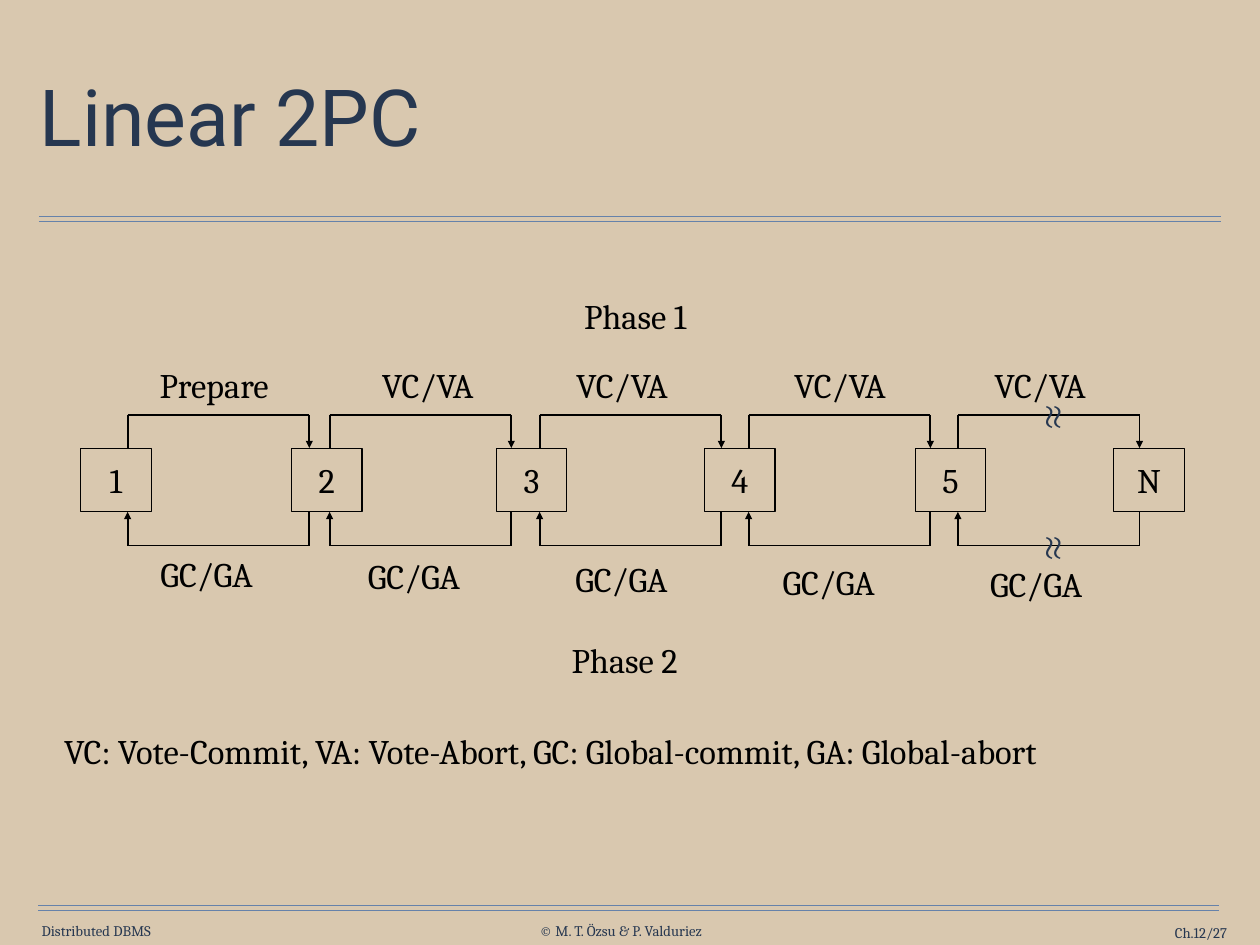
from dataclasses import dataclass
from itertools import pairwise

from lxml import etree
from pptx import Presentation
from pptx import util as u
from pptx.dml.color import RGBColor
from pptx.enum import shapes, text
from pptx.oxml import ns

WIDE, HIGH = 14.22, 10.67


@dataclass(frozen=True)
class Theme:
    sand: str = "D9C8AF"
    navy: str = "263750"
    rule: str = "6682AA"
    ink: str = "000000"
    head: str = "Roboto"
    body: str = "Cambria"
    sign: str = "TeX Gyre Pagella"
    big: int = 64
    mid: int = 28
    wave: int = 30
    tiny: int = 12


@dataclass(frozen=True)
class Area:
    """A rectangle in percent of the slide's width and height."""
    left: float
    top: float
    wide: float
    high: float

    def ends(self) -> tuple:
        return across(self.left), down(self.top), across(self.wide), down(self.high)


@dataclass(frozen=True)
class Site:
    name: str
    left: float


@dataclass(frozen=True)
class Hop:
    """A message pair between neighbours: bracket start, vote label and its left."""
    start: float
    vote: str
    left: float


LOOK = Theme()
SITES = [Site("1", 6.4), Site("2", 23.14), Site("3", 39.38),
         Site("4", 55.91), Site("5", 72.64), Site("N", 88.4)]
HOPS = [Hop(10.13, "Prepare", 11.67), Hop(26.16, "VC/VA", 29.32),
        Hop(42.83, "VC/VA", 44.73), Hop(59.42, "VC/VA", 62.03),
        Hop(76.02, "VC/VA", 77.92)]
SPAN = 14.42
ROOF, TOP, BASE, FLOOR = 43.9, 47.42, 54.17, 57.73
LABEL_W, LABEL_H = 12, 5.72
PAD = (1, 0.66)


def across(share: float) -> int:
    return u.Inches(WIDE * share / 100)


def down(share: float) -> int:
    return u.Inches(HIGH * share / 100)


def tint(code: str) -> RGBColor:
    return RGBColor.from_string(code)


def write(shape, words: str, *, size: int = LOOK.mid, font: str = LOOK.body,
          color: str = LOOK.ink, align=text.PP_ALIGN.LEFT,
          anchor=text.MSO_ANCHOR.TOP, pad: tuple = (0, 0),
          pitch: float = 1.0, turn: bool = False) -> None:
    frame = shape.text_frame
    frame.word_wrap = True
    frame.vertical_anchor = anchor
    frame.margin_left = frame.margin_right = across(pad[0])
    frame.margin_top = frame.margin_bottom = down(pad[1])
    if turn:
        frame._txBody.bodyPr.set("vert", "vert")
    para = frame.paragraphs[0]
    para.alignment = align
    para.line_spacing = pitch
    run = para.add_run()
    run.text = words
    run.font.size = u.Pt(size)
    run.font.name = font
    run.font.color.rgb = tint(color)


def label(slide, area: Area, words: str, **form) -> None:
    write(slide.shapes.add_textbox(*area.ends()), words, **form)


def line(slide, start: tuple, end: tuple, color: str = LOOK.ink,
         width: float = 1.5, arrow: bool = False) -> None:
    link = slide.shapes.add_connector(
        shapes.MSO_CONNECTOR.STRAIGHT, across(start[0]), down(start[1]),
        across(end[0]), down(end[1]))
    link.line.color.rgb = tint(color)
    link.line.width = u.Pt(width)
    if arrow:
        etree.SubElement(link.line._get_or_add_ln(), ns.qn("a:tailEnd"), type="triangle")
    etree.SubElement(link._element.spPr, ns.qn("a:effectLst"))


def route(slide, points: list) -> None:
    """Join the points with lines; the last one ends in an arrowhead."""
    legs = list(pairwise(points))
    for step, (start, end) in enumerate(legs, 1):
        line(slide, start, end, arrow=step == len(legs))


def frame(slide) -> None:
    """Draw the title, the double rules and the footer."""
    for left, right, top in ((3.09, 96.91, 22.87), (3.02, 96.77, 95.78)):
        for row in (top, top + 0.56):
            line(slide, (left, row), (right, row), LOOK.rule, 1)
    mid = text.MSO_ANCHOR.MIDDLE
    label(slide, Area(2.74, 4.59, 94.51, 16.49), "Linear 2PC", size=LOOK.big,
          font=LOOK.head, color=LOOK.navy, anchor=mid, pad=(0.42, 0.56), pitch=0.9)
    left, right = text.PP_ALIGN.LEFT, text.PP_ALIGN.RIGHT
    for area, words, align in (
            (Area(3.31, 97.56, 9.7, 1.87), "Distributed DBMS", left),
            (Area(42.83, 97.56, 14.63, 1.87), "© M. T. Özsu & P. Valduriez", left),
            (Area(86.57, 97.75, 10.83, 1.87), "Ch.12/27", right)):
        label(slide, area, words, size=LOOK.tiny, color=LOOK.navy,
              align=align, anchor=mid)


def node(slide, site: Site) -> None:
    box = slide.shapes.add_shape(
        shapes.MSO_SHAPE.RECTANGLE, *Area(site.left, TOP, 5.6, BASE - TOP).ends())
    box.shadow.inherit = False
    box.fill.solid()
    box.fill.fore_color.rgb = tint(LOOK.sand)
    box.line.color.rgb = tint(LOOK.ink)
    box.line.width = u.Pt(1)
    write(box, site.name, align=text.PP_ALIGN.CENTER, anchor=text.MSO_ANCHOR.MIDDLE)


def link(slide, hop: Hop, rank: int) -> None:
    """Draw the vote above and the answer below one pair of sites."""
    near, far = hop.start, hop.start + SPAN
    route(slide, [(near, TOP), (near, ROOF), (far, ROOF), (far, TOP)])
    route(slide, [(far, BASE), (far, FLOOR), (near, FLOOR), (near, BASE)])
    label(slide, Area(hop.left, 37.86, LABEL_W, LABEL_H), hop.vote, pad=PAD)
    label(slide, Area(11.74 + 16.46 * rank, 57.83 + 0.28 * rank, LABEL_W, LABEL_H),
          "GC/GA", pad=PAD)


def main() -> None:
    deck = Presentation()
    deck.slide_width, deck.slide_height = u.Inches(WIDE), u.Inches(HIGH)
    slide = deck.slides.add_slide(deck.slide_layouts[6])
    slide.background.fill.solid()
    slide.background.fill.fore_color.rgb = tint(LOOK.sand)
    frame(slide)
    for site in SITES:
        node(slide, site)
    for rank, hop in enumerate(HOPS):
        link(slide, hop, rank)
    for left, top, wide, words in (
            (45.36, 30.55, LABEL_W, "Phase 1"),
            (44.37, 66.92, LABEL_W, "Phase 2"),
            (4.08, 76.57, 91.49, "VC: Vote-Commit, VA: Vote-Abort, "
                                 "GC: Global-commit, GA: Global-abort")):
        label(slide, Area(left, top, wide, LABEL_H), words, pad=PAD)
    for row in (ROOF, FLOOR):
        label(slide, Area(81.58, row - 1.25, 5, 3.1), "≈", size=LOOK.wave,
              font=LOOK.sign, color=LOOK.navy, align=text.PP_ALIGN.CENTER,
              anchor=text.MSO_ANCHOR.MIDDLE, turn=True)
    deck.save("out.pptx")


if __name__ == "__main__":
    main()
